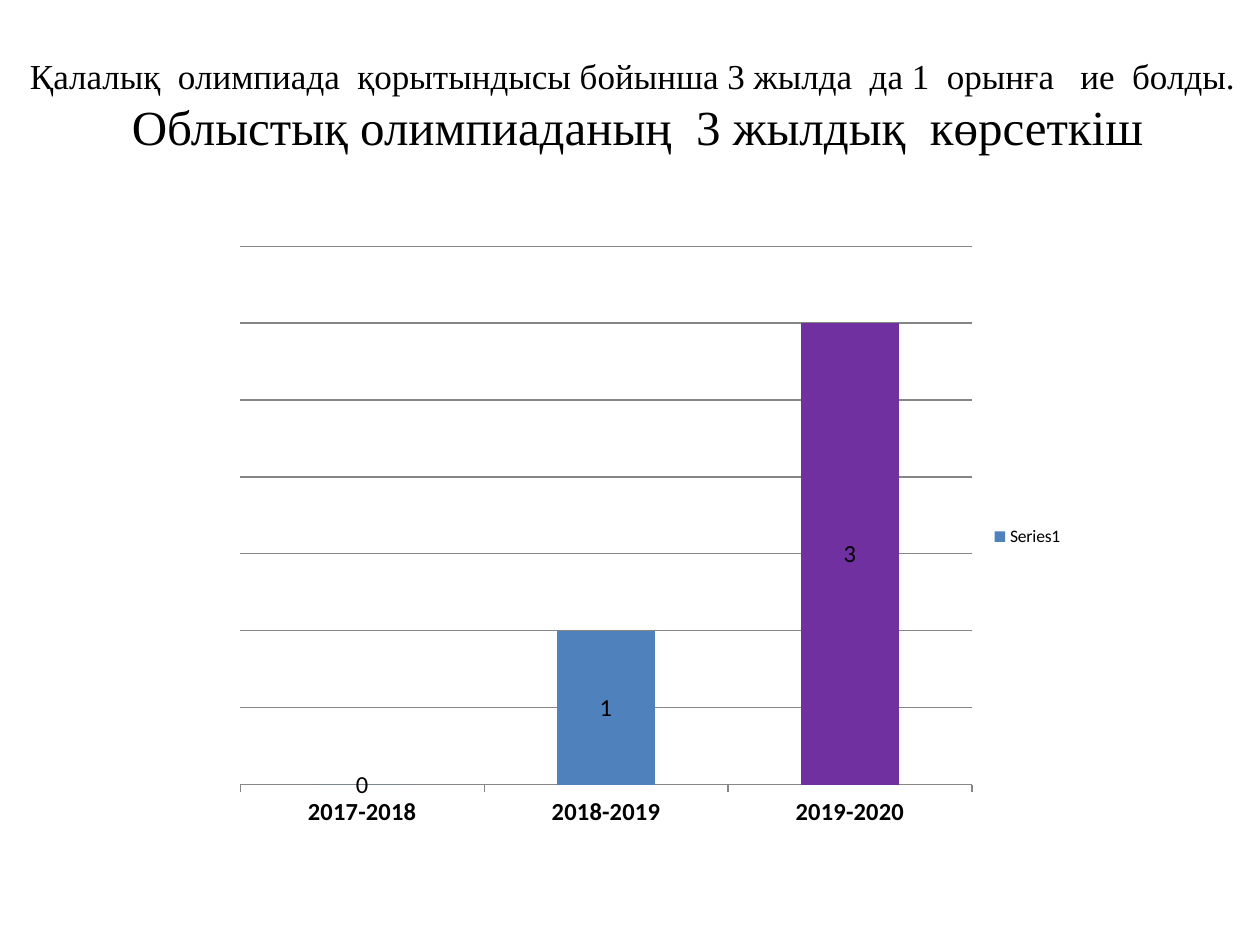
from pptx import Presentation
from pptx.chart.data import CategoryChartData
from pptx.dml.color import RGBColor
from pptx.enum.chart import XL_CHART_TYPE as ChartType
from pptx.enum.chart import XL_LABEL_POSITION as LabelPos
from pptx.enum.chart import XL_LEGEND_POSITION as LegendPos
from pptx.enum.chart import XL_TICK_MARK as Tick
from pptx.enum.text import MSO_ANCHOR, PP_ALIGN
from pptx.util import Cm, Pt

COLORS = {"text": "000000", "bar": "4F81BD", "best_year": "7030A0", "grid": "868686"}


def rgb(name):
    return RGBColor.from_string(COLORS[name])


def style_font(font, **values):
    for key, value in values.items():
        setattr(font, key, value)
    font.color.rgb = rgb("text")


deck = Presentation()
deck.slide_width, deck.slide_height = Cm(25.4), Cm(19.05)
slide = deck.slides.add_slide(deck.slide_layouts[6])

# Heading: city result above the regional chart title
heading = slide.shapes.add_textbox(Cm(0.3), Cm(0.53), Cm(25.1), Cm(3.18)).text_frame
heading.word_wrap = True
heading.vertical_anchor = MSO_ANCHOR.MIDDLE
lines = heading.paragraphs[0]
lines.alignment = PP_ALIGN.CENTER
for number, (words, size) in enumerate([
    ("Қалалық  олимпиада  қорытындысы бойынша 3 жылда  да 1  орынға   ие  болды. ", 20),
    ("Облыстық олимпиаданың  3 жылдық  көрсеткіш", 28),
]):
    if number:
        lines.add_line_break()
    run = lines.add_run()
    run.text = words
    style_font(run.font, name="Times New Roman", size=Pt(size))

# Regional olympiad results by school year
results = CategoryChartData()
results.categories = ["2017-2018", "2018-2019", "2019-2020"]
results.add_series("Series1", [0, 1, 3])
chart = slide.shapes.add_chart(
    ChartType.COLUMN_CLUSTERED, Cm(4.5), Cm(4.72), Cm(17.2), Cm(12.2), results
).chart
chart.has_title = False
style_font(chart.font, name="Calibri", size=Pt(10))
chart.has_legend = True
chart.legend.position = LegendPos.RIGHT
chart.legend.include_in_layout = False

# Axes
years = chart.category_axis
years.major_tick_mark = Tick.OUTSIDE
years.format.line.color.rgb = rgb("grid")
style_font(years.tick_labels.font, name="Calibri", size=Pt(14), bold=True)
places = chart.value_axis
for key, value in {"visible": False, "minimum_scale": 0, "maximum_scale": 3.5,
                   "major_unit": 0.5, "has_major_gridlines": True}.items():
    setattr(places, key, value)
places.major_gridlines.format.line.color.rgb = rgb("grid")

# Columns and their values
plot = chart.plots[0]
plot.gap_width = 150
plot.vary_by_categories = False
series = plot.series[0]
for column, color in [(series, "bar"), (series.points[2], "best_year")]:
    column.format.fill.solid()
    column.format.fill.fore_color.rgb = rgb(color)
labels = series.data_labels
labels.show_value = True
labels.position = LabelPos.CENTER
style_font(labels.font, name="Calibri", size=Pt(14))

deck.save("out.pptx")
